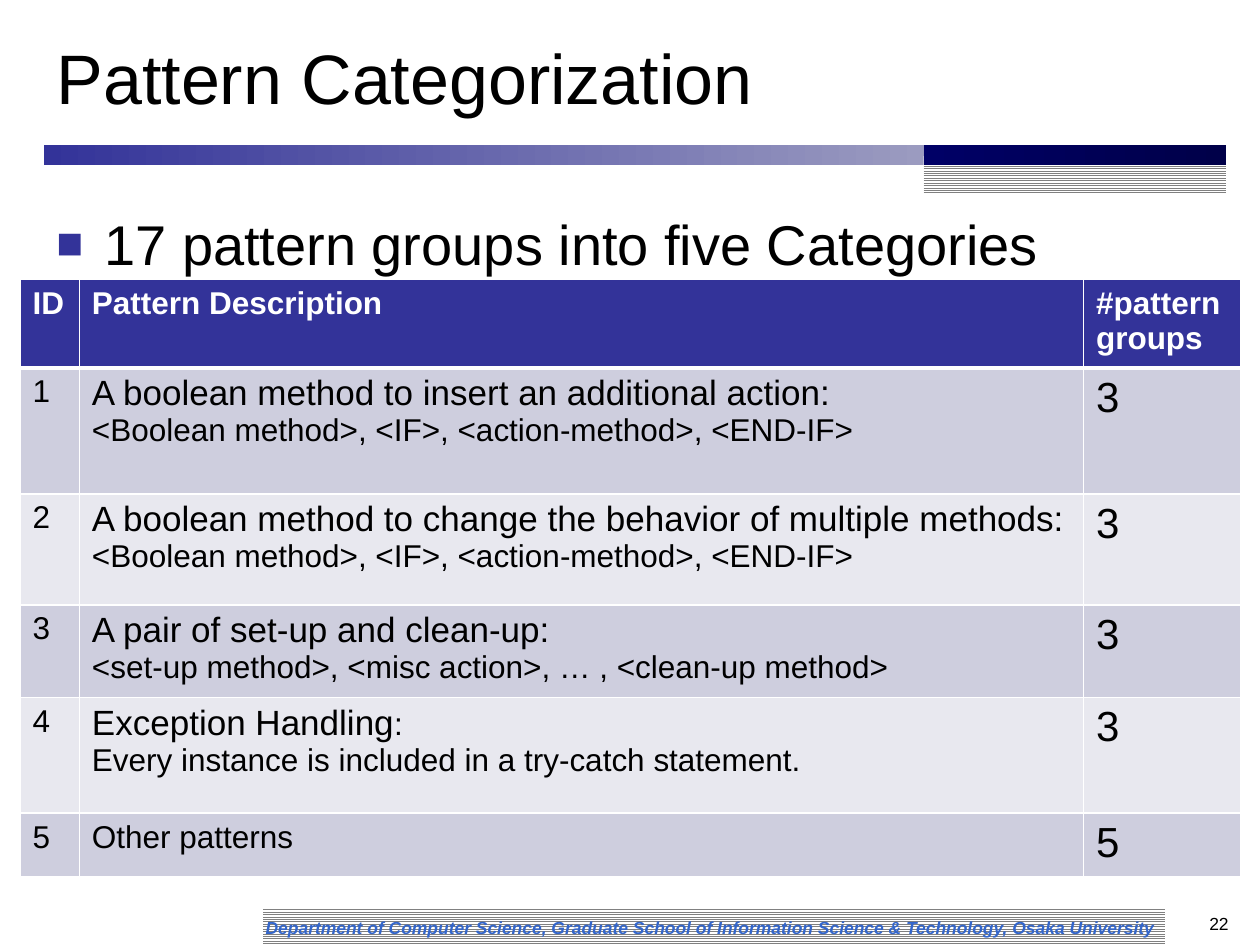
from dataclasses import dataclass

from lxml.etree import SubElement
from pptx import Presentation
from pptx.dml.color import RGBColor
from pptx.enum.dml import MSO_PATTERN
from pptx.enum.shapes import MSO_SHAPE
from pptx.enum.text import MSO_ANCHOR, MSO_AUTO_SIZE, PP_ALIGN
from pptx.oxml.ns import qn
from pptx.util import Inches, Pt


@dataclass(frozen=True)
class Theme:
    font: str = "Arial"
    ink: str = "000000"
    paper: str = "FFFFFF"
    accent: str = "333399"
    accent_end: str = "9B9BC0"
    navy: str = "000066"
    navy_end: str = "000049"
    stripe: str = "808080"
    credit: str = "3366CC"
    bands: tuple = ("CECEDE", "E8E8EF")
    title_size: int = 40
    bullet_size: int = 32
    count_size: int = 24
    lead_size: int = 20
    cell_size: int = 18
    footer_size: int = 10


THEME = Theme()
COLUMNS = (0.47, 7.97, 1.25)
ROWS = (0.65, 1, 0.88, 0.7, 0.92, 0.42)
HEADINGS = ("ID", "Pattern Description", "#pattern groups")
BOOLEAN_STEPS = "<Boolean method>, <IF>, <action-method>, <END-IF>"
LEAD, CELL = THEME.lead_size, THEME.cell_size
# Each category: paragraphs of (text, size) runs, then the number of groups
CATEGORIES = (
    ([[("A boolean method to insert an additional action:", LEAD)],
      [(BOOLEAN_STEPS, CELL)]], 3),
    ([[("A boolean method to change the behavior of multiple methods:", LEAD)],
      [(BOOLEAN_STEPS, CELL)]], 3),
    ([[("A pair of set-up and clean-up:", LEAD)],
      [("<set-up method>, <misc action>, … , <clean-up method>", CELL)]], 3),
    ([[("Exception Handling", LEAD), (":", CELL)],
      [("Every instance is included in a try-catch statement.", CELL)]], 3),
    ([[("Other patterns", CELL)]], 5),
)


def rgb(value):
    return RGBColor.from_string(value)


class SlideBuilder:
    def __init__(self, slide, theme):
        self.slide = slide
        self.theme = theme

    def place(self, shape, box):
        for side, inches in zip(("left", "top", "width", "height"), box):
            setattr(shape, side, Inches(inches))

    def run(self, paragraph, text, size, color=None, **styles):
        run = paragraph.add_run()
        run.text = text
        run.font.color.rgb = rgb(color or self.theme.ink)
        formats = {"name": self.theme.font, "size": Pt(size), **styles}
        for name, value in formats.items():
            setattr(run.font, name, value)

    def title(self, box, text):
        title = self.slide.shapes.title
        self.place(title, box)
        frame = title.text_frame
        frame.auto_size = MSO_AUTO_SIZE.NONE
        frame.vertical_anchor = MSO_ANCHOR.MIDDLE
        frame.paragraphs[0].alignment = PP_ALIGN.LEFT
        self.run(frame.paragraphs[0], text, self.theme.title_size)

    def text(self, box, text, size, color=None, align=PP_ALIGN.LEFT,
             anchor=MSO_ANCHOR.TOP, **styles):
        frame = self.slide.shapes.add_textbox(*map(Inches, box)).text_frame
        frame.word_wrap = True
        frame.vertical_anchor = anchor
        paragraph = frame.paragraphs[0]
        paragraph.alignment = align
        self.run(paragraph, text, size, color, **styles)
        return frame

    def bullet(self, box, text):
        frame = self.text(box, text, self.theme.bullet_size)
        frame.margin_top = Inches(0.11)
        properties = frame.paragraphs[0]._p.get_or_add_pPr()
        indent = Inches(0.38)
        properties.set("marL", str(indent))
        properties.set("indent", str(-indent))
        color = SubElement(properties, qn("a:buClr"))
        SubElement(color, qn("a:srgbClr"), val=self.theme.accent)
        SubElement(properties, qn("a:buSzPct"), val="80000")
        SubElement(properties, qn("a:buFont"), typeface=self.theme.font)
        SubElement(properties, qn("a:buChar"), char="■")

    def bar(self, box):
        bar = self.slide.shapes.add_shape(MSO_SHAPE.RECTANGLE, *map(Inches, box))
        bar.shadow.inherit = False
        bar.line.fill.background()
        return bar

    def striped_bar(self, box):
        fill = self.bar(box).fill
        fill.patterned()
        fill.pattern = MSO_PATTERN.LIGHT_HORIZONTAL
        fill.fore_color.rgb = rgb(self.theme.stripe)
        fill.back_color.rgb = rgb(self.theme.paper)

    def gradient_bar(self, box, start, end):
        fill = self.bar(box).fill
        fill.gradient()
        fill.gradient_angle = 0
        for stop, position, color in zip(fill.gradient_stops, (0, 1), (start, end)):
            stop.position = position
            stop.color.rgb = rgb(color)

    def borders(self, cell, **widths):
        """Draw cell edges; keys are L, R, T and B, values are points."""
        properties = cell._tc.get_or_add_tcPr()
        for index, (edge, width) in enumerate(widths.items()):
            line = SubElement(properties, qn(f"a:ln{edge}"), w=str(Pt(width)))
            solid = SubElement(line, qn("a:solidFill"))
            SubElement(solid, qn("a:srgbClr"), val=self.theme.paper)
            properties.insert(index, line)

    def cell(self, cell, paragraphs, fill, color=None, **styles):
        cell.fill.solid()
        cell.fill.fore_color.rgb = rgb(fill)
        frame = cell.text_frame
        for index, runs in enumerate(paragraphs):
            paragraph = frame.add_paragraph() if index else frame.paragraphs[0]
            for text, size in runs:
                self.run(paragraph, text, size, color, **styles)

    def category_table(self, left, top):
        theme = self.theme
        table = self.slide.shapes.add_table(
            len(ROWS), len(COLUMNS), Inches(left), Inches(top),
            Inches(sum(COLUMNS)), Inches(sum(ROWS))).table
        for column, width in zip(table.columns, COLUMNS):
            column.width = Inches(width)
        for row, height in zip(table.rows, ROWS):
            row.height = Inches(height)
        for index, heading in enumerate(HEADINGS):
            cell = table.cell(0, index)
            self.cell(cell, [[(heading, theme.cell_size)]], theme.accent,
                      theme.paper, bold=True)
            self.borders(cell, L=1, R=1, T=1, B=3)
        for number, (description, groups) in enumerate(CATEGORIES, 1):
            contents = ([[(str(number), theme.cell_size)]], description,
                        [[(str(groups), theme.count_size)]])
            band = theme.bands[(number - 1) % 2]
            for index, paragraphs in enumerate(contents):
                cell = table.cell(number, index)
                self.cell(cell, paragraphs, band, bold=False)
                self.borders(cell, L=1, R=1, T=3 if number == 1 else 1, B=1)


def main():
    deck = Presentation()
    deck.slide_width, deck.slide_height = Inches(10), Inches(7.5)
    page = SlideBuilder(deck.slides.add_slide(deck.slide_layouts[5]), THEME)

    page.striped_bar((2.09, 7.2, 7.16, 0.3))
    page.gradient_bar((0.35, 1.15, 6.98, 0.16), THEME.accent, THEME.accent_end)
    page.striped_bar((7.33, 1.24, 2.4, 0.3))
    page.gradient_bar((7.33, 1.15, 2.4, 0.16), THEME.navy, THEME.navy_end)
    page.text((2.01, 7.23, 7.32, 0.27),
              "Department of Computer Science, Graduate School of Information "
              "Science & Technology, Osaka University",
              THEME.footer_size, THEME.credit, anchor=MSO_ANCHOR.MIDDLE,
              bold=True, italic=True)
    page.title((0.35, 0.13, 9.38, 0.95), "Pattern Categorization")
    page.bullet((0.35, 1.55, 9.37, 5.28), "17 pattern groups into five Categories")
    page.category_table(0.16, 2.22)
    page.text((9.25, 7.2, 0.6, 0.3), "22", THEME.footer_size, align=PP_ALIGN.RIGHT)

    deck.save("out.pptx")


if __name__ == "__main__":
    main()
